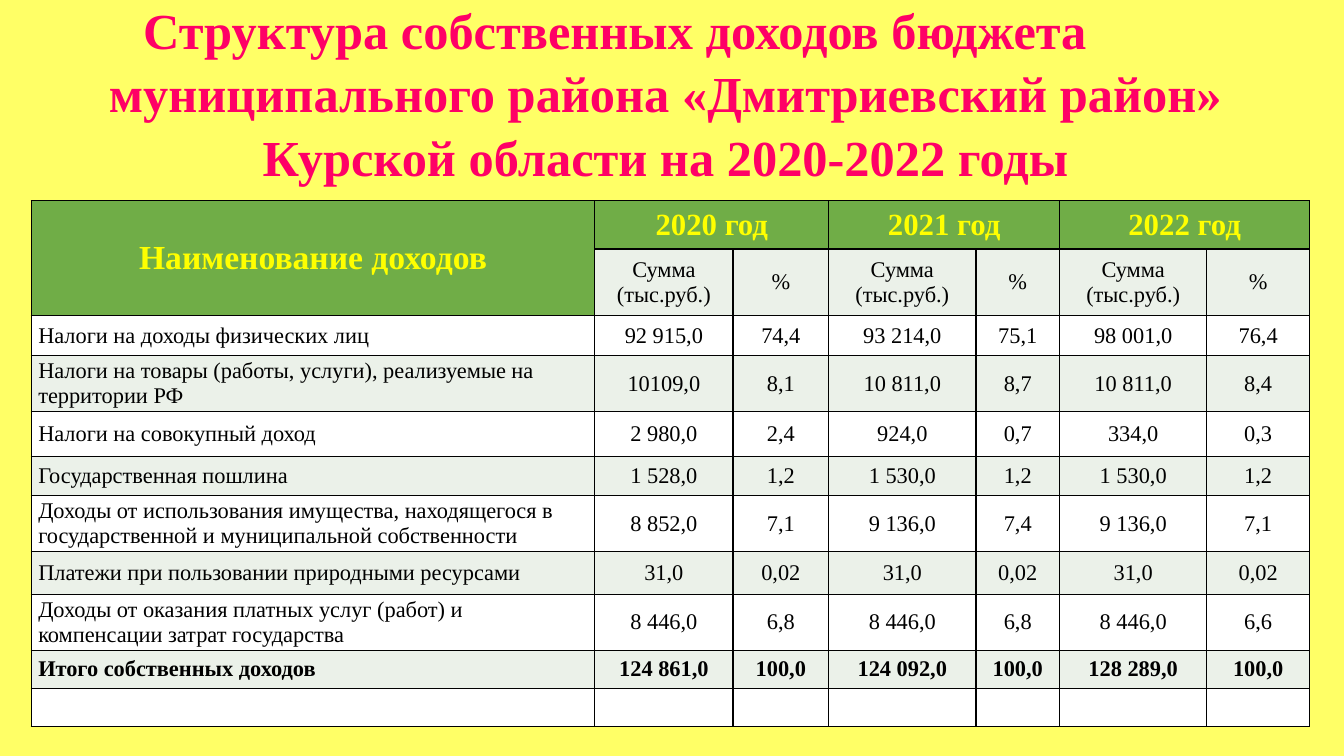
import pptx
import pptx.dml.color
import pptx.enum.text
import pptx.oxml
import pptx.oxml.ns
import pptx.util
import lxml.etree

Inches = pptx.util.Inches
Pt = pptx.util.Pt
ALIGN = pptx.enum.text.PP_ALIGN
MIDDLE = pptx.enum.text.MSO_ANCHOR.MIDDLE

COLORS = {
    "background": "FFFF66",
    "title": "FF0066",
    "header": "70AD47",
    "header_text": "FFFF00",
    "band": "EBF1E9",
    "plain": "FFFFFF",
    "ink": "000000",
}

TITLE = (
    "Структура собственных доходов бюджета\v"
    "муниципального района «Дмитриевский район»\v"
    "Курской области на 2020-2022 годы"
)
YEARS = ["2020 год", "2021 год", "2022 год"]
INCOME = [
    ["Налоги на доходы физических лиц",
     "92 915,0", "74,4", "93 214,0", "75,1", "98 001,0", "76,4"],
    ["Налоги на товары (работы, услуги), реализуемые на территории РФ",
     "10109,0", "8,1", "10 811,0", "8,7", "10 811,0", "8,4"],
    ["Налоги на совокупный доход",
     "2 980,0", "2,4", "924,0", "0,7", "334,0", "0,3"],
    ["Государственная пошлина",
     "1 528,0", "1,2", "1 530,0", "1,2", "1 530,0", "1,2"],
    ["Доходы от использования имущества, находящегося в государственной и муниципальной собственности",
     "8 852,0", "7,1", "9 136,0", "7,4", "9 136,0", "7,1"],
    ["Платежи при пользовании природными ресурсами",
     "31,0", "0,02", "31,0", "0,02", "31,0", "0,02"],
    ["Доходы от оказания платных услуг (работ) и компенсации затрат государства",
     "8 446,0", "6,8", "8 446,0", "6,8", "8 446,0", "6,6"],
    ["Итого собственных доходов",
     "124 861,0", "100,0", "124 092,0", "100,0", "128 289,0", "100,0"],
    [""] * 7,
]
COLUMN_WIDTHS = [5.59, 1.37, 0.95, 1.46, 0.83, 1.46, 1.02]
ROW_HEIGHTS = [0.48, 0.66, 0.4, 0.55, 0.45, 0.39, 0.55, 0.43, 0.55, 0.38, 0.38]


def rgb(name):
    return pptx.dml.color.RGBColor.from_string(COLORS[name])


def write(frame, text, size=16, color="ink", bold=False, align=ALIGN.CENTER):
    frame.text = text
    paragraph = frame.paragraphs[0]
    paragraph.alignment = align
    for styled in [paragraph, *paragraph.runs]:
        styled.font.name = "Times New Roman"
        styled.font.size = Pt(size)
        styled.font.bold = bold
        styled.font.color.rgb = rgb(color)
    return paragraph


class BudgetSlide:
    def __init__(self, deck):
        self.slide = deck.slides.add_slide(deck.slide_layouts[6])
        background = self.slide.background.fill
        background.solid()
        background.fore_color.rgb = rgb("background")

    def title(self, text, left, top, width, height):
        heading = self.slide.shapes.add_textbox(
            Inches(left), Inches(top), Inches(width), Inches(height))
        frame = heading.text_frame
        frame.word_wrap = True
        frame.vertical_anchor = MIDDLE
        frame.margin_left = 0
        frame.margin_right = Inches(1.13)
        paragraph = write(frame, text, size=36, color="title", bold=True)
        paragraph.line_spacing = 1.05
        properties = paragraph._p.get_or_add_pPr()
        properties.set("marL", str(Inches(1)))
        properties.set("indent", str(-Inches(1)))
        for run in paragraph.runs:
            run._r.get_or_add_rPr().insert(0, self.outline("a:ln", 0.75))

    def outline(self, tag, width):
        line = pptx.oxml.parse_xml(
            f'<{tag} {pptx.oxml.ns.nsdecls("a")} w="{Pt(width)}"><a:solidFill>'
            f'<a:srgbClr val="{COLORS["ink"]}"/></a:solidFill></{tag}>')
        return line

    def table(self, left, top, widths, heights):
        frame = self.slide.shapes.add_table(
            len(heights), len(widths), Inches(left), Inches(top),
            Inches(sum(widths)), Inches(sum(heights)))
        grid = frame.table
        for column, width in zip(grid.columns, widths):
            column.width = Inches(width)
        for row, height in zip(grid.rows, heights):
            row.height = Inches(height)
        return grid

    def cell(self, cell, text, fill, body=False, **style):
        properties = cell._tc.get_or_add_tcPr()
        for side in "LRTB":
            properties.append(self.outline(f"a:ln{side}", 1))
        cell.fill.solid()
        cell.fill.fore_color.rgb = rgb(fill)
        cell.vertical_anchor = MIDDLE
        if body:
            cell.margin_left = cell.margin_right = Inches(0.07)
            cell.margin_top = cell.margin_bottom = 0
        write(cell.text_frame, text, **style)

    def income_table(self):
        grid = self.table(0.31, 1.99, COLUMN_WIDTHS, ROW_HEIGHTS)
        grid.cell(0, 0).merge(grid.cell(1, 0))
        for column in (1, 3, 5):
            grid.cell(0, column).merge(grid.cell(0, column + 1))

        years = [text for year in YEARS for text in (year, "")]
        for column, text in enumerate(["Наименование доходов", *years]):
            self.cell(grid.cell(0, column), text, "header",
                      size=22 if column else 24, color="header_text", bold=True)
        self.cell(grid.cell(1, 0), "", "header")
        for column, text in enumerate(["Сумма (тыс.руб.)", "%"] * len(YEARS), 1):
            self.cell(grid.cell(1, column), text, "band")

        for index, entries in enumerate(INCOME):
            for column, text in enumerate(entries):
                self.cell(grid.cell(index + 2, column), text,
                          "band" if index % 2 else "plain", body=True,
                          bold=entries[0].startswith("Итого"),
                          align=ALIGN.CENTER if column else ALIGN.LEFT)


def main():
    deck = pptx.Presentation()
    deck.slide_width = Inches(13.33)
    deck.slide_height = Inches(7.5)
    page = BudgetSlide(deck)
    page.title(TITLE, 0, 0, 13.33, 1.81)
    page.income_table()
    deck.save("out.pptx")


if __name__ == "__main__":
    main()
